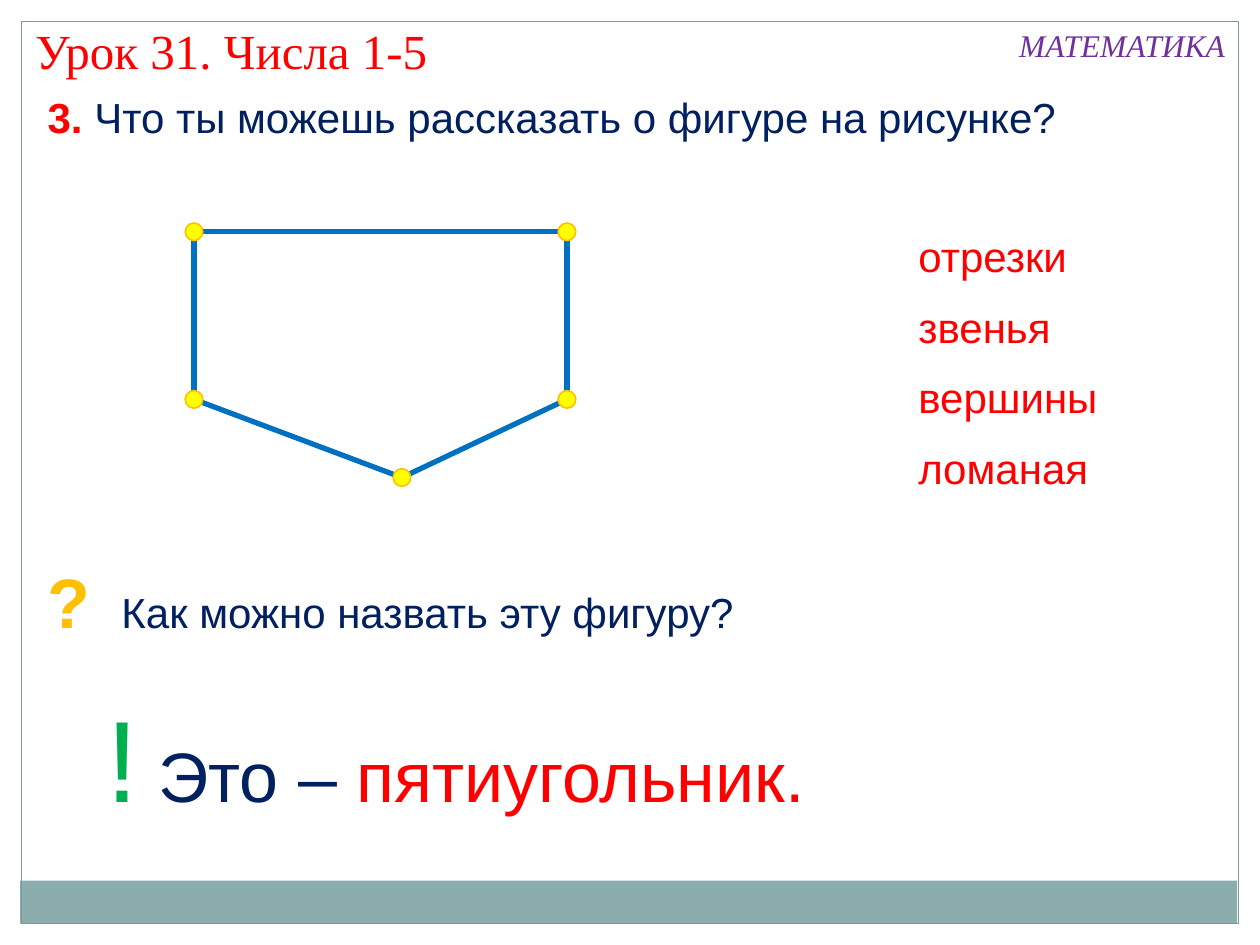
import pptx
import pptx.util
import pptx.dml.color
import pptx.enum.shapes
import pptx.enum.text
import pptx.oxml.xmlchemy

Inches = pptx.util.Inches
Pt = pptx.util.Pt
SHAPES = pptx.enum.shapes.MSO_SHAPE
COLORS = {
    "white": "FFFFFF", "band": "8CADAE", "frame": "7C999A", "edge": "0070C0",
    "vertex": "FFFF00", "amber": "FFC000", "red": "FF0000", "navy": "002060",
    "green": "00B050", "purple": "7030A0",
}


def color(name):
    return pptx.dml.color.RGBColor.from_string(COLORS[name])


def add_figure(page, kind, place, fill=None, line=None, width=0.75):
    figure = page.shapes.add_shape(kind, *map(Inches, place))
    figure.shadow.inherit = False
    if fill:
        figure.fill.solid()
        figure.fill.fore_color.rgb = color(fill)
    else:
        figure.fill.background()
    if line:
        figure.line.color.rgb = color(line)
        figure.line.width = Pt(width)
    else:
        figure.line.fill.background()


deck = pptx.Presentation()
deck.slide_width, deck.slide_height = Inches(10), Inches(7.5)
page = deck.slides.add_slide(deck.slide_layouts[6])

for place, fill, line in [
    ((0, 0, 10, 0.17), "white", None),
    ((9.83, 0, 0.17, 7.5), "white", None),
    ((0, 0, 0.17, 7.5), "white", None),
    ((0.16, 6.99, 9.66, 0.34), "band", None),
    ((0.17, 0.17, 9.66, 7.16), None, "frame"),
]:
    add_figure(page, SHAPES.RECTANGLE, place, fill, line)

vertices = [(1.54, 1.84), (4.5, 1.84), (4.5, 3.17), (3.19, 3.79), (1.54, 3.17)]
for start, end in zip(vertices, vertices[1:] + vertices[:1]):
    edge = page.shapes.add_connector(
        pptx.enum.shapes.MSO_CONNECTOR.STRAIGHT, *map(Inches, start + end))
    edge.line.color.rgb = color("edge")
    edge.line.width = Pt(3)
    outline = edge.line._get_or_add_ln()
    for tag in ("a:headEnd", "a:tailEnd"):
        tip = pptx.oxml.xmlchemy.OxmlElement(tag)
        tip.set("type", "oval")
        outline.append(tip)
    edge._element.spPr.append(pptx.oxml.xmlchemy.OxmlElement("a:effectLst"))

serif = {"name": "Times New Roman"}
sans = {"name": "Arial", "size": Pt(24)}
large = {"name": "Arial", "size": Pt(40)}
texts = [
    ((0.75, 5.4, 6.79, 1.21), True, [
        ("!", "green", {**large, "size": Pt(66)}),
        (" Это – ", "navy", large),
        ("пятиугольник.", "red", large)]),
    ((0.18, 0.11, 3.39, 0.57), True, [
        ("Урок 31. Числа 1-5", "red", {**serif, "size": Pt(28)})]),
    ((7.99, 0.16, 1.85, 0.4), False, [
        ("МАТЕМАТИКА", "purple", {**serif, "size": Pt(18), "italic": True})]),
    ((0.28, 0.68, 9.41, 0.5), True, [
        ("3. ", "red", {**sans, "bold": True}),
        ("Что ты можешь рассказать о фигуре на рисунке?", "navy", sans)]),
    ((0.28, 4.38, 9.41, 0.77), True, [
        ("? ", "amber", {**large, "bold": True}),
        (" Как можно назвать эту фигуру?", "navy", sans)]),
]
terms = [("отрезки", 1.39), ("звенья", 1.26), ("вершины", 1.64), ("ломаная", 1.73)]
for row, (term, width) in enumerate(terms):
    texts.append(((7.19, 1.78 + 0.56 * row, width, 0.5), False, [(term, "red", sans)]))

for place, wrap, spans in texts:
    box = page.shapes.add_textbox(*map(Inches, place))
    box.text_frame.word_wrap = wrap
    box.text_frame.auto_size = pptx.enum.text.MSO_AUTO_SIZE.SHAPE_TO_FIT_TEXT
    para = box.text_frame.paragraphs[0]
    for words, ink, formats in spans:
        span = para.add_run()
        span.text = words
        span.font.color.rgb = color(ink)
        for attribute, value in formats.items():
            setattr(span.font, attribute, value)

for x, y in vertices:
    add_figure(page, SHAPES.OVAL, (x - 0.07, y - 0.07, 0.14, 0.14), "vertex", "amber", 0.9)

deck.save("out.pptx")
